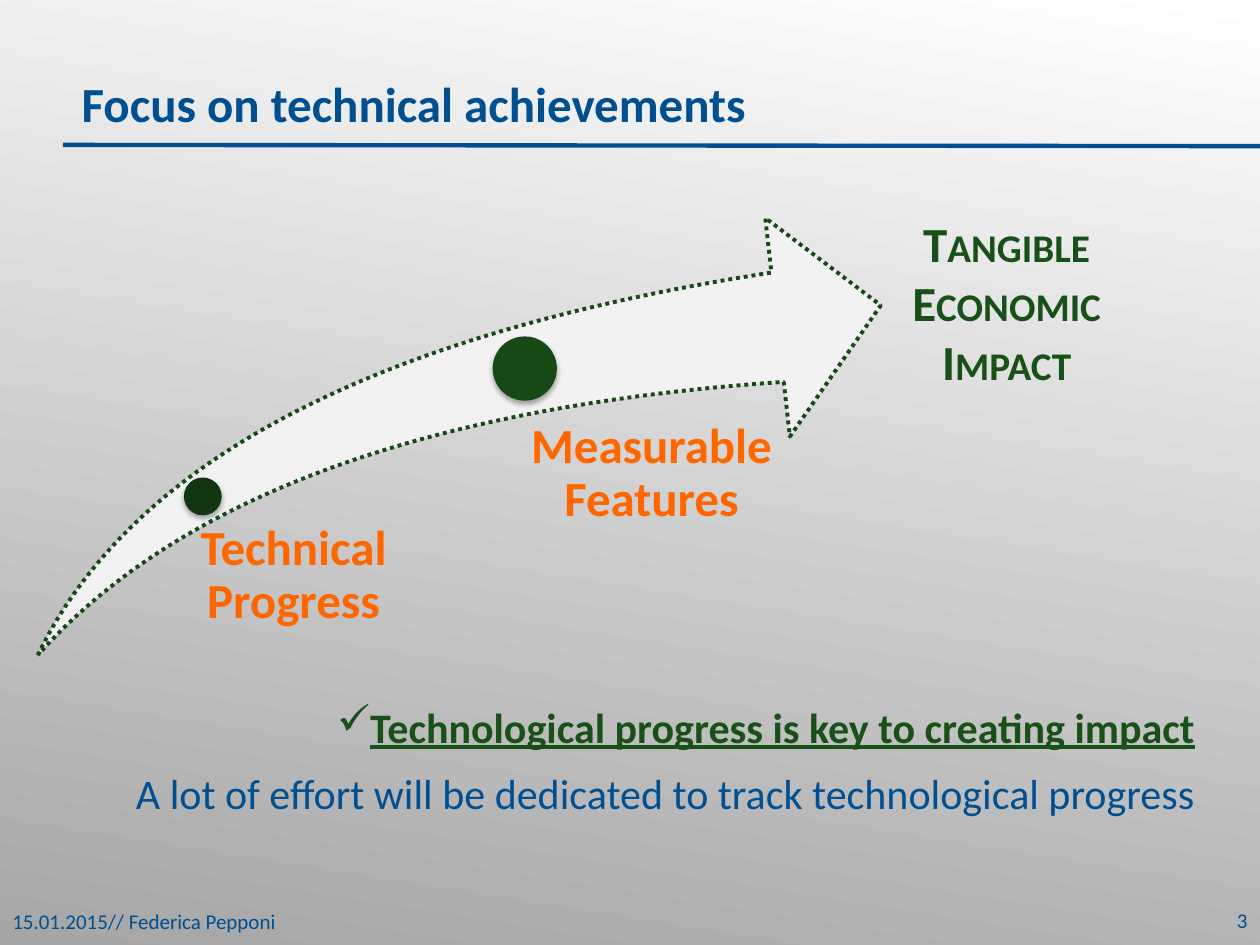
import pptx
import pptx.util
import pptx.dml.color
import pptx.enum.dml
import pptx.enum.shapes
import pptx.enum.text
import pptx.oxml
import pptx.oxml.ns
import lxml.etree

SHAPE = pptx.enum.shapes.MSO_SHAPE
ALIGN = pptx.enum.text.PP_ALIGN
MID = pptx.enum.text.MSO_ANCHOR.MIDDLE
COLS, ROWS = 100, 75
HUES = {
    "white": "FFFFFF", "gray": "A6A6A6", "pale": "F2F2F2", "blue": "004F91",
    "edge": "174917", "dark": "113511", "green": "194F19", "orange": "FF6600",
}

deck = pptx.Presentation()
deck.slide_width = pptx.util.Inches(10)
deck.slide_height = pptx.util.Inches(7.5)
slide = deck.slides.add_slide(deck.slide_layouts[6])


def hue(name):
    return pptx.dml.color.RGBColor.from_string(HUES[name])


def grid(x, y, w, h):
    col, row = deck.slide_width / COLS, deck.slide_height / ROWS
    return [round(n) for n in (x * col, y * row, w * col, h * row)]


def inner(box, x, y, w, h):
    return box[0] + x, box[1] + y, w, h


def shape(kind, box, fill=None):
    item = slide.shapes.add_shape(kind, *grid(*box))
    item.shadow.inherit = False
    item.line.fill.background()
    if fill:
        item.fill.solid()
        item.fill.fore_color.rgb = hue(fill)
    return item


def check(para):
    props = para._p.get_or_add_pPr()
    props.set("marL", str(pptx.util.Inches(0.25)))
    props.set("indent", str(-pptx.util.Inches(0.25)))
    mark = lxml.etree.SubElement(props, pptx.oxml.ns.qn("a:buChar"))
    mark.set("char", "✓")


def write(text, box=None, frame=None, size=28, color="blue", bold=False, line=False,
          small=False, align=ALIGN.LEFT, anchor=None, lead=None, after=None,
          left=None, tick=False):
    if frame is None:
        frame = slide.shapes.add_textbox(*grid(*box)).text_frame
        frame.word_wrap = True
        para = frame.paragraphs[0]
    else:
        para = frame.add_paragraph()
    if anchor is not None:
        frame.vertical_anchor = anchor
    if left is not None:
        frame.margin_left = pptx.util.Inches(left)
        frame.margin_top = frame.margin_right = frame.margin_bottom = 0
    if tick:
        check(para)
    para.alignment = align
    if lead:
        para.line_spacing = lead
    if after:
        para.space_after = pptx.util.Pt(after)
    run = para.add_run()
    run.text = text
    font = run.font
    font.name, font.size = "Calibri", pptx.util.Pt(size)
    font.bold, font.underline = bold, line
    font.color.rgb = hue(color)
    if small:
        run._r.get_or_add_rPr().set("cap", "small")
    return frame


def ground(box):
    fill = shape(SHAPE.RECTANGLE, box).fill
    fill.gradient()
    fill.gradient_angle = 360 - 99
    for stop, name in zip(fill.gradient_stops, ("white", "gray")):
        stop.color.rgb = hue(name)


def head(box):
    x, y, w, h = box
    left, top, wide, high = grid(x, y + h, w, 0.1)
    rule = slide.shapes.add_connector(
        pptx.enum.shapes.MSO_CONNECTOR.STRAIGHT, left, top, left + wide, top + high)
    rule.line.color.rgb = hue("blue")
    rule.line.width = pptx.util.Pt(2.5)
    lxml.etree.SubElement(rule._element.spPr, pptx.oxml.ns.qn("a:effectLst"))
    write("Focus on technical achievements", inner(box, 0.5, 0, 90.4, 5.3),
          bold=True, lead=0.9, after=12)


def dot(box, fill):
    item = shape(SHAPE.OVAL, box, fill)
    glow = item._element.spPr.find(pptx.oxml.ns.qn("a:effectLst"))
    glow.append(pptx.oxml.parse_xml(
        f'<a:outerShdw {pptx.oxml.ns.nsdecls("a")} blurRad="{pptx.util.Pt(3.1)}" '
        f'dist="{pptx.util.Pt(1.8)}" dir="5400000" rotWithShape="0">'
        '<a:srgbClr val="000000"><a:alpha val="35000"/></a:srgbClr></a:outerShdw>'))


def swoosh(box):
    arrow = shape(SHAPE.SWOOSH_ARROW, box, "pale")
    arrow.adjustments[0] = arrow.adjustments[1] = 0.25
    arrow.line.color.rgb = hue("edge")
    arrow.line.width = pptx.util.Pt(2.25)
    arrow.line.dash_style = pptx.enum.dml.MSO_LINE.ROUND_DOT
    steps = (
        ("Technical Progress", (11.6, 20.6, 3, 3), "dark", (9.4, 22.6, 20.2, 11.6), 0.16),
        ("Measurable Features", (36.1, 9.4, 5.1, 5.1), "edge", (35.4, 11, 23.9, 18.6), 0.27),
    )
    for text, spot, fill, area, left in steps:
        dot(inner(box, *spot), fill)
        write(text, inner(box, *area), color="orange", bold=True, lead=0.9,
              align=ALIGN.CENTER, anchor=MID, left=left)


def goal(box):
    write("Tangible Economic Impact", box, color="green", bold=True, small=True,
          align=ALIGN.CENTER, anchor=MID)


def notes(box):
    style = dict(size=24, align=ALIGN.RIGHT, lead=0.9, after=12)
    frame = write("Technological progress is key to creating impact", box,
                  color="green", bold=True, line=True, tick=True, **style)
    write("A lot of effort will be dedicated to track technological progress",
          frame=frame, **style)


def foot(box):
    part = 23.3
    write("3", inner(box, box[2] - part, 0, part, box[3]), size=12,
          align=ALIGN.RIGHT, anchor=MID)
    write("15.01.2015// Federica Pepponi", inner(box, 0, 0.1, part, box[3]),
          size=12, anchor=MID)


ground((0, 0, COLS, ROWS))
head((5, 5.9, 95, 5.6))
swoosh((3, 17.3, 66.9, 34.7))
goal((70.3, 16.4, 19.2, 15.1))
notes((7.2, 55.6, 88.6, 15.3))
foot((0, 71, COLS, 4))
deck.save("out.pptx")
